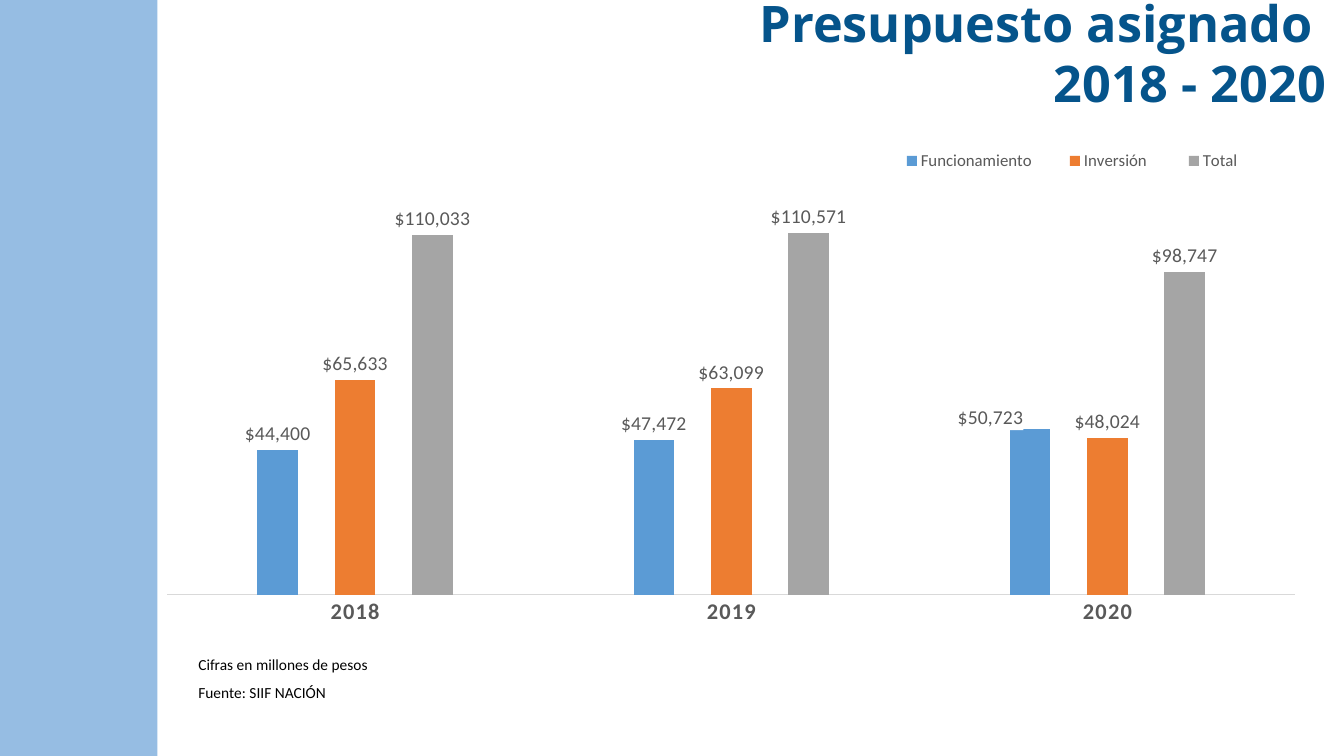
"""Build the slide with the budget assigned from 2018 to 2020."""
from lxml import etree
from pptx import Presentation
from pptx.chart.data import CategoryChartData
from pptx.dml.color import RGBColor
from pptx.enum.chart import XL_CHART_TYPE as ChartType
from pptx.enum.chart import XL_LABEL_POSITION as LabelPosition
from pptx.enum.chart import XL_LEGEND_POSITION as LegendPosition
from pptx.enum.chart import XL_TICK_MARK as TickMark
from pptx.enum.shapes import MSO_SHAPE as Preset
from pptx.enum.text import MSO_AUTO_SIZE as AutoSize
from pptx.enum.text import PP_ALIGN as Align
from pptx.oxml import parse_xml
from pptx.oxml.ns import nsdecls, qn
from pptx.util import Pt

WHITE = RGBColor(0xFF, 0xFF, 0xFF)
BLACK = RGBColor(0, 0, 0)
NAVY = RGBColor(0x05, 0x54, 0x8B)
SKY = RGBColor(0x96, 0xBD, 0xE3)
SLATE = RGBColor(0x59, 0x59, 0x59)
MIST = RGBColor(0xD9, 0xD9, 0xD9)
BLUE = RGBColor(0x5B, 0x9B, 0xD5)
ORANGE = RGBColor(0xED, 0x7D, 0x31)
GREY = RGBColor(0xA5, 0xA5, 0xA5)

YEARS = ["2018", "2019", "2020"]
BUDGET = [
    ("Funcionamiento", BLUE, (44400, 47472, 50723)),
    ("Inversión ", ORANGE, (65633, 63099, 48024)),
    ("Total", GREY, (110033, 110571, 98747)),
]
PESOS = '"$"#,##0'


def apply(target, values):
    """Set each named attribute of the target."""
    for name, value in values.items():
        setattr(target, name, value)


def manual_layout(**parts):
    """Return a chart layout element with the given parts."""
    layout = parse_xml(f"<c:layout {nsdecls('c')}><c:manualLayout/></c:layout>")
    for name, value in parts.items():
        etree.SubElement(layout[0], qn(f"c:{name}")).set("val", str(value))
    return layout


def white_fill():
    """Return chart shape properties with a white fill and no line."""
    return parse_xml(
        f"<c:spPr {nsdecls('c', 'a')}><a:solidFill><a:srgbClr val='{WHITE}'/>"
        "</a:solidFill><a:ln><a:noFill/></a:ln></c:spPr>"
    )


class BudgetSlide:
    """Hold the slide and the styles of its parts."""

    title = {"name": "Open Sans", "size": Pt(36), "bold": True}
    note = {"name": "Calibri", "size": Pt(11)}
    year = {"name": "Calibri", "size": Pt(16), "bold": True}
    amount = {"name": "Calibri", "size": Pt(14), "bold": False}
    key = {"name": "Calibri", "size": Pt(12)}

    def __init__(self, deck):
        """Add a blank slide to the deck."""
        self.slide = deck.slides.add_slide(deck.slide_layouts[6])

    def style(self, font, values, color):
        """Give the font its values and color."""
        apply(font, values)
        font.color.rgb = color

    def band(self, left, top, width, height, color):
        """Draw a plain filled rectangle."""
        band = self.slide.shapes.add_shape(
            Preset.RECTANGLE, Pt(left), Pt(top), Pt(width), Pt(height))
        band.shadow.inherit = False
        band.fill.solid()
        band.fill.fore_color.rgb = color
        band.line.fill.background()

    def text(self, box, lines, values, color, wrap=False, **paragraph_format):
        """Write lines of text in a box."""
        frame = self.slide.shapes.add_textbox(*map(Pt, box)).text_frame
        apply(frame, {"word_wrap": wrap, "auto_size": AutoSize.SHAPE_TO_FIT_TEXT})
        for index, line in enumerate(lines):
            paragraph = frame.add_paragraph() if index else frame.paragraphs[0]
            apply(paragraph, paragraph_format)
            run = paragraph.add_run()
            run.text = line
            self.style(run.font, values, color)

    def columns(self, box):
        """Draw the budget as clustered columns."""
        data = CategoryChartData(number_format=PESOS)
        data.categories = YEARS
        for name, _, amounts in BUDGET:
            data.add_series(name, amounts)
        chart = self.slide.shapes.add_chart(
            ChartType.COLUMN_CLUSTERED, *map(Pt, box), data).chart
        chart.has_title = False
        self.style(chart.font, {"name": "Calibri", "size": Pt(10)}, BLACK)
        chart.element.find(qn("c:chart")).addnext(white_fill())
        chart.element.chart.plotArea.insert(0, manual_layout(
            layoutTarget="inner", xMode="edge", yMode="edge",
            x=0.007, y=0.135, w=0.97, h=0.758))
        for old in chart.element.chart.plotArea.findall(qn("c:layout"))[1:]:
            chart.element.chart.plotArea.remove(old)
        plot = chart.plots[0]
        apply(plot, {"gap_width": 444, "overlap": -90, "vary_by_categories": False})
        for series, (_, color, _) in zip(plot.series, BUDGET):
            self.amounts(series, color)
        self.shift_label(plot.series[0].points[2].data_label)
        self.axes(chart)
        self.legend(chart)

    def amounts(self, series, color):
        """Color the columns of a series and label them."""
        series.format.fill.solid()
        series.format.fill.fore_color.rgb = color
        labels = series.data_labels
        apply(labels, {
            "show_value": True, "position": LabelPosition.OUTSIDE_END,
            "number_format": PESOS, "number_format_is_linked": False})
        self.style(labels.font, self.amount, SLATE)

    def shift_label(self, label):
        """Move one amount to the left of its column."""
        self.style(label.font, self.amount, SLATE)
        label.position = LabelPosition.OUTSIDE_END
        text_style = label.font._element.getparent().getparent().getparent()
        text_style.addprevious(manual_layout(x=-0.034, y=0.01))
        text_style.addprevious(white_fill())

    def axes(self, chart):
        """Show the years and hide the value scale."""
        years = chart.category_axis
        apply(years, {"major_tick_mark": TickMark.NONE, "has_major_gridlines": False})
        years.format.line.color.rgb = MIST
        years.format.line.width = Pt(0.75)
        self.style(years.tick_labels.font, self.year, SLATE)
        years.tick_labels.font._element.set("spc", "100")
        apply(chart.value_axis, {
            "visible": False, "has_major_gridlines": False,
            "minimum_scale": 0, "maximum_scale": 120000})

    def legend(self, chart):
        """Place the legend above the last year."""
        chart.has_legend = True
        legend = chart.legend
        apply(legend, {"position": LegendPosition.TOP, "include_in_layout": False})
        self.style(legend.font, self.key, SLATE)
        for old in legend._element.findall(qn("c:layout")):
            legend._element.remove(old)
        legend._element.find(qn("c:legendPos")).addnext(manual_layout(
            xMode="edge", yMode="edge", x=0.615, y=0.03, w=0.34, h=0.05))


def main():
    """Build and save the deck."""
    deck = Presentation()
    apply(deck, {"slide_width": Pt(960), "slide_height": Pt(540)})
    budget = BudgetSlide(deck)
    budget.band(0, 0, 112.5, 540, SKY)
    budget.columns((113.5, 94.6, 831, 370))
    budget.text((460, -9.4, 494.4, 94.3), ["Presupuesto asignado ", "2018 - 2020"],
                budget.title, NAVY, wrap=True, alignment=Align.RIGHT)
    notes = ["Cifras en millones de pesos", "Fuente: SIIF NACIÓN"]
    for row, (note, width) in enumerate(zip(notes, (139, 113))):
        budget.text((134.6, 464.4 + 20.2 * row, width, 20.6), [note], budget.note, BLACK)
    deck.save("out.pptx")


if __name__ == "__main__":
    main()
